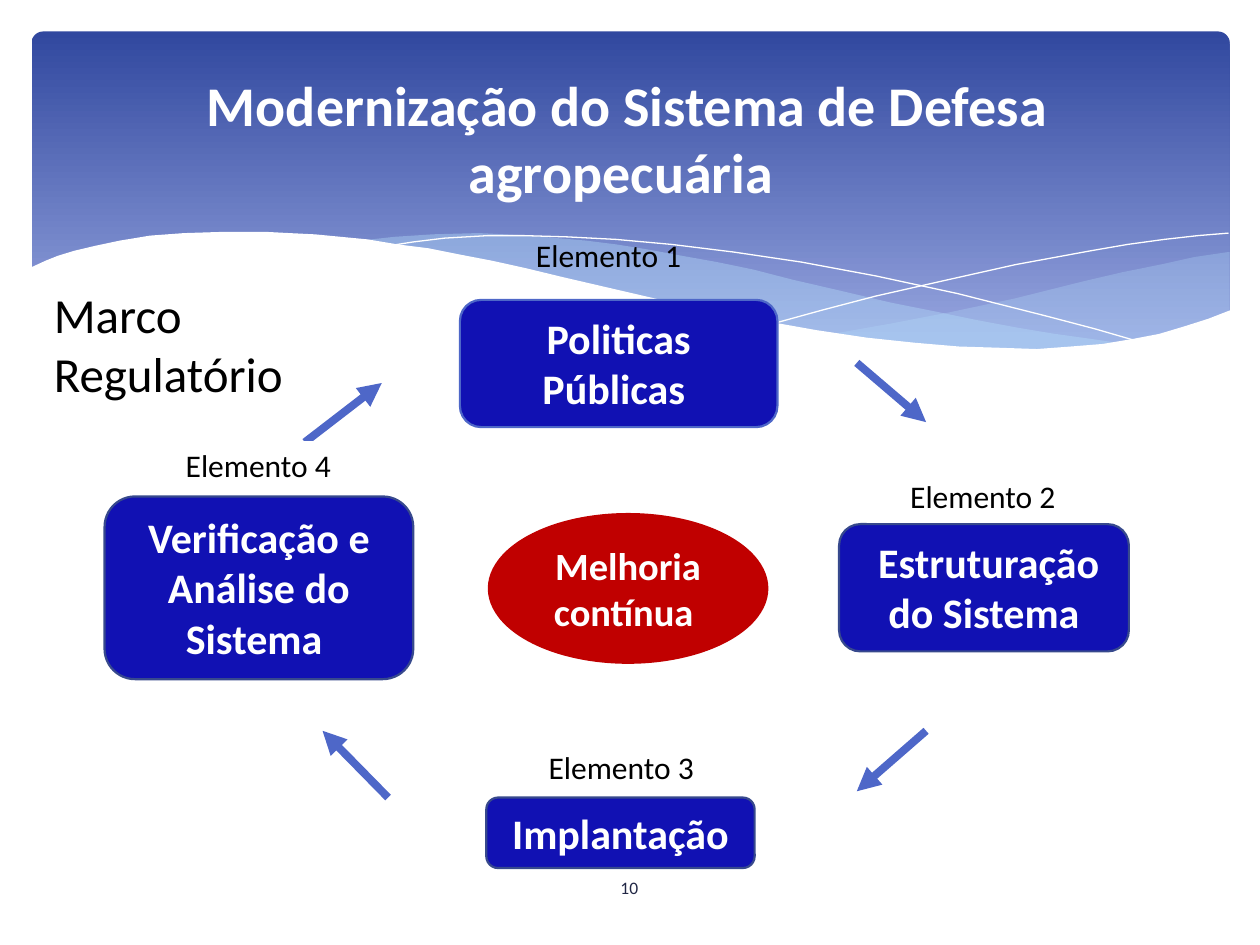
from lxml.etree import SubElement
from pptx import Presentation
from pptx.dml.color import RGBColor
from pptx.enum.shapes import MSO_CONNECTOR as Connector, MSO_SHAPE as Shape
from pptx.enum.text import MSO_ANCHOR as Anchor, MSO_AUTO_SIZE as AutoSize, PP_ALIGN as Align
from pptx.oxml.ns import qn
from pptx.util import Pt

PX = 9144
WHITE, BLACK, BLUE, NAVY = "FFFFFF", "000000", "1111B3", "37498D"
RED, ACCENT, PALE, INK = "C00000", "4E67C8", "B4DCFA", "212745"

RIGHT_WAVE = [
    (975, 200), (948, 204), (921, 210), (891, 216), (861, 223), (805, 237),
    (753, 248), (706, 257), (661, 265), (691, 269), (719, 272), (745, 275),
    (769, 277), (803, 278), (835, 277), (863, 275), (889, 272), (913, 267),
    (935, 262), (949, 257), (963, 252), (976, 247), (976, 200),
]
LEFT_WAVE = [
    (893, 273), (866, 269), (837, 265), (807, 260), (775, 254), (741, 247),
    (706, 240), (668, 231), (629, 222), (598, 214), (569, 208), (541, 203),
    (514, 198), (489, 194), (465, 191), (442, 189), (420, 187), (380, 185),
    (344, 186), (313, 188), (286, 191), (323, 196), (362, 203), (404, 211),
    (449, 222), (530, 240), (601, 255), (650, 264), (695, 270), (736, 275),
    (773, 277), (807, 278), (838, 278), (867, 276), (893, 273),
]
LONG_CURVE = [
    (309, 195), (328, 192), (353, 189), (387, 187), (416, 187), (450, 188),
    (489, 190), (533, 194), (582, 200), (636, 208), (695, 219), (760, 233),
    (831, 251), (869, 261), (907, 272),
]
SHORT_CURVE = [
    (613, 257), (653, 246), (695, 235), (748, 223), (806, 210), (866, 199),
    (895, 194), (924, 190), (951, 187), (975, 185),
]
WHITE_WAVE = [
    (977, 246), (959, 253), (940, 259), (920, 265), (899, 269), (875, 273),
    (850, 275), (823, 277), (793, 276), (761, 275), (726, 272), (688, 268),
    (648, 262), (603, 254), (555, 245), (503, 233), (447, 220), (418, 213),
    (391, 207), (365, 202), (340, 197), (316, 194), (292, 190), (271, 188),
    (250, 186), (230, 185), (211, 184), (177, 184), (146, 185), (119, 187),
    (95, 191), (76, 195), (59, 199), (46, 203), (36, 207), (23, 213),
    (23, 329), (977, 329),
]


def color(value):
    return RGBColor.from_string(value)


class Slide:
    font = "Calibri"
    edge = 1.25

    def __init__(self, page):
        self.page = page
        self.shapes = page.shapes

    def place(self, box, left, top, width, height):
        box.left, box.top = left * PX, top * PX
        box.width, box.height = width * PX, height * PX

    def letter(self, box, text, size, ink, bold=False, align=Align.CENTER,
               anchor=Anchor.TOP, grow=True):
        frame = box.text_frame
        frame.text = text
        frame.word_wrap = True
        frame.vertical_anchor = anchor
        frame.auto_size = AutoSize.SHAPE_TO_FIT_TEXT if grow else AutoSize.NONE
        para = frame.paragraphs[0]
        para.alignment = align
        for span in para.runs:
            span.font.name = self.font
            span.font.size = Pt(size)
            span.font.bold = bold
            span.font.color.rgb = color(ink)

    def title(self, text, *area):
        box = self.shapes.title
        box.element.getparent().append(box.element)
        self.place(box, *area)
        self.letter(box, text, 32, WHITE, True)

    def text(self, text, size, ink, *area, **style):
        box = self.shapes.add_textbox(*(length * PX for length in area))
        self.letter(box, text, size, ink, **style)

    def shape(self, kind, fill, line, *area):
        box = self.shapes.add_shape(kind, *(length * PX for length in area))
        box.shadow.inherit = False
        box.fill.solid()
        box.fill.fore_color.rgb = color(fill)
        box.line.color.rgb = color(line)
        box.line.width = Pt(self.edge)
        return box

    def step(self, text, *area, kind=Shape.ROUNDED_RECTANGLE, fill=BLUE, line=NAVY, size=24):
        self.letter(self.shape(kind, fill, line, *area), text, size, WHITE, True)

    def label(self, text, left, top):
        box = self.shape(Shape.RECTANGLE, WHITE, WHITE, left, top, 232, 36)
        self.letter(box, text, 18, BLACK, anchor=Anchor.MIDDLE, grow=False)

    def header(self, *area):
        box = self.shapes.add_shape(Shape.ROUNDED_RECTANGLE, *(length * PX for length in area))
        box.shadow.inherit = False
        box.adjustments[0] = 0.034
        box.line.fill.background()
        box.fill.gradient()
        box.fill.gradient_angle = 270
        stops = zip(box.fill.gradient_stops, (0, 0.9), ("31489F", "95A4DE"))
        for stop, position, value in stops:
            stop.position = position
            stop.color.rgb = color(value)

    def outline(self, points, closed):
        builder = self.shapes.build_freeform(*points[0], scale=PX)
        builder.add_line_segments(points[1:], close=closed)
        form = builder.convert_to_shape()
        form.shadow.inherit = False
        return form

    def wave(self, points, fill, opacity=100):
        form = self.outline(points, True)
        form.line.fill.background()
        form.fill.solid()
        form.fill.fore_color.rgb = color(fill)
        if opacity < 100:
            tint = form.element.spPr.find(qn("a:solidFill"))[0]
            SubElement(tint, qn("a:alpha")).set("val", str(opacity * 1000))

    def curve(self, points):
        form = self.outline(points, False)
        form.fill.background()
        form.line.color.rgb = color(WHITE)
        form.line.width = Pt(0)

    def arrow(self, *ends):
        line = self.shapes.add_connector(Connector.STRAIGHT, *(length * PX for length in ends))
        line.line.color.rgb = color(ACCENT)
        line.line.width = Pt(4.5)
        properties = line.element.spPr
        SubElement(properties.find(qn("a:ln")), qn("a:tailEnd")).set("type", "triangle")
        SubElement(properties, qn("a:effectLst"))


def main():
    deck = Presentation()
    deck.slide_width, deck.slide_height = 1000 * PX, 750 * PX
    slide = Slide(deck.slides.add_slide(deck.slide_layouts[5]))

    slide.header(25, 25, 951, 270)
    slide.wave(RIGHT_WAVE, PALE, 29)
    slide.wave(LEFT_WAVE, PALE, 40)
    slide.curve(LONG_CURVE)
    slide.curve(SHORT_CURVE)
    slide.wave(WHITE_WAVE, WHITE)

    slide.text("Elemento 1", 18, BLACK, 367, 184, 232, 36, anchor=Anchor.MIDDLE, grow=False)
    slide.step("Politicas Públicas ", 365, 238, 252, 101,
               kind=Shape.FLOWCHART_ALTERNATE_PROCESS, line=ACCENT)
    slide.step(" Estruturação do Sistema", 666, 416, 230, 101)
    slide.step("Implantação", 386, 633, 213, 56)
    slide.step("Verificação e Análise do Sistema ", 83, 394, 245, 145)
    slide.step("Melhoria contínua ", 388, 408, 221, 118,
               kind=Shape.OVAL, fill=RED, line=RED, size=22)

    for ends in ((680, 288, 735, 335), (735, 580, 680, 628),
                 (308, 633, 256, 580), (242, 351, 303, 304)):
        slide.arrow(*ends)

    slide.title("Modernização do Sistema de Defesa agropecuária ", 116, 51, 764, 118)
    for number, left, top in ((2, 664, 376), (3, 377, 591), (4, 89, 351)):
        slide.label(f"Elemento {number}", left, top)
    slide.text("10", 10, INK, 436, 684, 127, 40, anchor=Anchor.MIDDLE, grow=False)
    slide.text("Marco Regulatório", 28, BLACK, 33, 221, 280, 104, align=Align.LEFT)

    deck.save("out.pptx")


if __name__ == "__main__":
    main()
